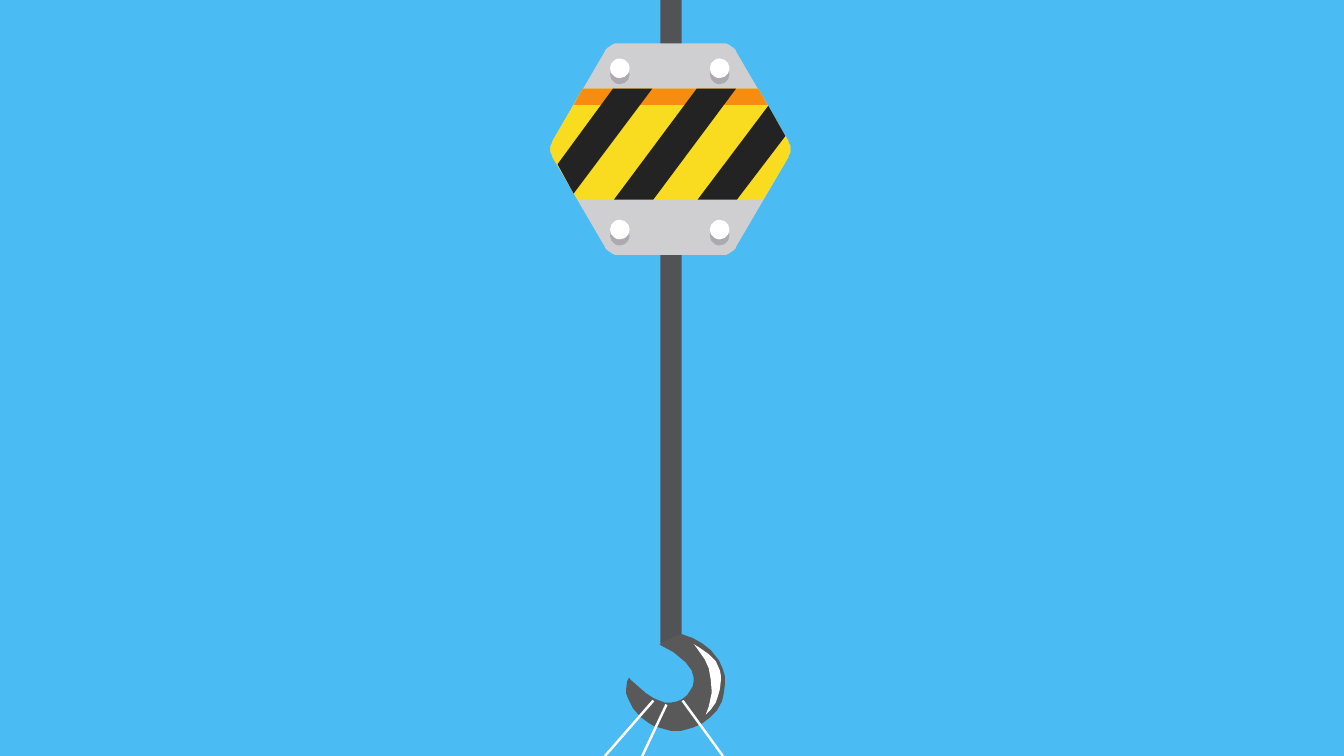
from collections import namedtuple
from dataclasses import dataclass

from lxml import etree
from pptx import Presentation
from pptx.dml.color import RGBColor
from pptx.enum.shapes import MSO_CONNECTOR, MSO_SHAPE
from pptx.oxml.ns import qn
from pptx.util import Inches, Pt

RECTANGLE = MSO_SHAPE.RECTANGLE
OVAL = MSO_SHAPE.OVAL
STRAIGHT = MSO_CONNECTOR.STRAIGHT

# The page is a grid of 1333 columns by 750 rows; all lengths are in grid units.
ROWS = 750
PAGE_HEIGHT = Inches(7.5)
UNIT = PAGE_HEIGHT // ROWS

Box = namedtuple("Box", "left top width height")
CABLE = Box(655, 0, 21, 638)
HOOK = Box(621, 629, 98, 96)
PLATE = Box(546, 43, 238, 210)


@dataclass(frozen=True)
class Theme:
    sky: str = "4ABBF3"
    cable: str = "525357"
    hook: str = "595959"
    white: str = "FFFFFF"
    steel: str = "CFCED0"
    yellow: str = "F9DC20"
    orange: str = "F68D11"
    black: str = "242323"
    rivet_shade: str = "ACA9B1"
    sling_width: float = 1.75


THEME = Theme()

# Offsets from the top left corner of the hook's box.
HOOK_OUTLINE = [
    (54, 0), (33, 10), (34, 11), (47, 18), (59, 28), (65, 36), (67, 43),
    (67, 47), (66, 52), (63, 57), (61, 60), (59, 62), (55, 65), (50, 67),
    (45, 68), (38, 68), (28, 64), (20, 59), (12, 52), (4, 45), (3, 43),
    (1, 47), (0, 55), (0, 59), (2, 64), (7, 74), (14, 82), (22, 88),
    (27, 91), (33, 93), (44, 96), (55, 96), (66, 93), (75, 89), (83, 83),
    (90, 76), (95, 67), (96, 63), (97, 58), (98, 50), (98, 42), (96, 35),
    (92, 26), (84, 16), (75, 9), (66, 4), (55, 0),
]
SHINE_OUTLINE = [
    (94, 41), (93, 36), (89, 27), (82, 20), (72, 13), (67, 10), (68, 11),
    (73, 18), (78, 25), (82, 34), (84, 45), (85, 58), (82, 72), (79, 80),
    (84, 75), (89, 68), (91, 62), (93, 55), (94, 46),
]
SLINGS = [((40, 70), 16), ((27, 66), -21), ((56, 66), 96)]  # start, end column

# Offsets from the centre of the plate.
TOP_CORNER = [(52, -105), (55, -105), (57, -104), (59, -103), (60, -102),
              (62, -101), (63, -100), (65, -98), (65, -97)]
SIDE_CORNER = [(117, -8), (117, -7), (118, -5), (119, -3), (119, -1)]
BAND_TOP = (87, -60)
BAND_BOTTOM = (92, 50)
ORANGE_EDGE = (96, -44)
STRIPES = [
    [(-112, 15), (-96, 44), (-18, -60), (-57, -60)],
    [(-56, 50), (-17, 50), (65, -60), (26, -60)],
    [(66, 50), (114, -13), (97, -43), (27, 50)],
]
RIVET_LEFTS = (-60, 39)
RIVET_TOPS = (-90, 70)
RIVET_SIZE = 19.5
RIVET_DROP = 6


def emu(*lengths):
    return [round(length * UNIT) for length in lengths]


def paint(shape, color):
    shape.shadow.inherit = False
    shape.fill.solid()
    shape.fill.fore_color.rgb = RGBColor.from_string(color)
    shape.line.fill.background()


def add_preset(group, kind, box, color):
    paint(group.shapes.add_shape(kind, *emu(*box)), color)


def add_outline(group, origin, points, color):
    """Draw a closed outline whose points are offsets from origin."""
    builder = group.shapes.build_freeform(*points[0], scale=UNIT)
    builder.add_line_segments(points[1:], close=True)
    paint(builder.convert_to_shape(*emu(*origin)), color)


def add_sling(group, start, end):
    sling = group.shapes.add_connector(STRAIGHT, *emu(*start, *end))
    sling.line.color.rgb = RGBColor.from_string(THEME.white)
    sling.line.width = Pt(THEME.sling_width)
    etree.SubElement(sling._element.spPr, qn("a:effectLst"))


def mirror_down(points):
    return points + [(x, -y) for x, y in reversed(points)]


def mirror_left(points):
    return points + [(-x, y) for x, y in reversed(points)]


def draw_cable_and_hook(page, cable, hook):
    group = page.shapes.add_group_shape()
    add_preset(group, RECTANGLE, cable, THEME.cable)
    origin = (hook.left, hook.top)
    add_outline(group, origin, HOOK_OUTLINE, THEME.hook)
    add_outline(group, origin, SHINE_OUTLINE, THEME.white)
    for (x, y), end_x in SLINGS:
        add_sling(group, (hook.left + x, hook.top + y),
                  (hook.left + end_x, ROWS))


def draw_plate(page, box):
    group = page.shapes.add_group_shape()
    centre = (box.left + box.width / 2, box.top + box.height / 2)
    side = mirror_down(SIDE_CORNER)
    layers = [
        (mirror_left(mirror_down(TOP_CORNER + SIDE_CORNER)), THEME.steel),
        (mirror_left([BAND_TOP, *side, BAND_BOTTOM]), THEME.yellow),
        (mirror_left([BAND_TOP, ORANGE_EDGE]), THEME.orange),
        *[(stripe, THEME.black) for stripe in STRIPES],
    ]
    for points, color in layers:
        add_outline(group, centre, points, color)
    for drop, color in ((RIVET_DROP, THEME.rivet_shade), (0, THEME.white)):
        for top in RIVET_TOPS:
            for left in RIVET_LEFTS:
                rivet = Box(centre[0] + left, centre[1] + top + drop,
                            RIVET_SIZE, RIVET_SIZE)
                add_preset(group, OVAL, rivet, color)


def main():
    deck = Presentation()
    deck.slide_width = Inches(13.33)
    deck.slide_height = PAGE_HEIGHT
    page = deck.slides.add_slide(deck.slide_layouts.get_by_name("Blank"))
    page.background.fill.solid()
    page.background.fill.fore_color.rgb = RGBColor.from_string(THEME.sky)
    draw_cable_and_hook(page, CABLE, HOOK)
    draw_plate(page, PLATE)
    deck.save("out.pptx")


if __name__ == "__main__":
    main()
